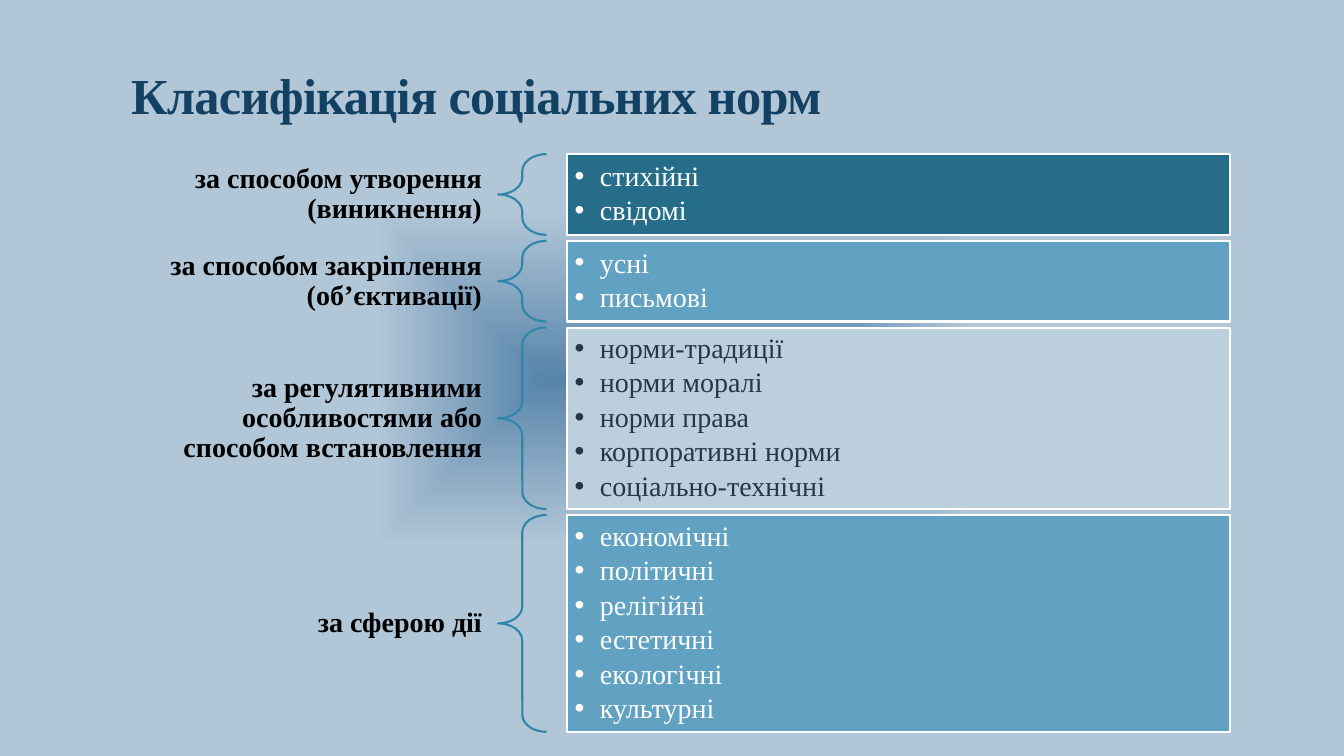
from lxml.etree import SubElement
from pptx import Presentation
from pptx.dml.color import RGBColor
from pptx.enum.shapes import MSO_SHAPE
from pptx.enum.text import MSO_ANCHOR, MSO_AUTO_SIZE, PP_ALIGN
from pptx.oxml import parse_xml
from pptx.oxml.ns import nsdecls, qn
from pptx.util import Inches, Pt

deck = Presentation()
deck.slide_width, deck.slide_height = Inches(13.33), Inches(7.5)
col, row = deck.slide_width / 1333, deck.slide_height / 750
hue = RGBColor.from_string


def grid(left, top, wide, tall):
    return [round(n * unit) for n, unit in zip((left, top, wide, tall), (col, row, col, row))]


def write(frame, lines, frame_look, line_look, font_look, color):
    frame.text = "\n".join(lines)
    looks = [(frame, frame_look)]
    for line in frame.paragraphs:
        font = line.runs[0].font
        font.color.rgb = hue(color)
        looks += [(line, line_look), (font, font_look)]
    for item, look in looks:
        for name, value in look.items():
            setattr(item, name, value)


slide = deck.slides.add_slide(deck.slide_layouts[5])
slide.background.fill.solid()
solid = slide.element.find(".//" + qn("p:bgPr")).find(qn("a:solidFill"))
glow = parse_xml(
    f'<a:gradFill {nsdecls("a")} rotWithShape="1"><a:gsLst>'
    '<a:gs pos="0"><a:srgbClr val="5884AA"><a:alpha val="80000"/></a:srgbClr></a:gs>'
    '<a:gs pos="44000"><a:srgbClr val="B1C6D7"/></a:gs>'
    '<a:gs pos="100000"><a:srgbClr val="B1C6D7"/></a:gs></a:gsLst>'
    '<a:path path="shape"><a:fillToRect l="50000" t="50000" r="50000" b="50000"/></a:path>'
    "</a:gradFill>"
)
solid.getparent().replace(solid, glow)

bold = {"name": "Times New Roman", "size": Pt(20), "bold": True}
plain = {**bold, "bold": False}
middle = {"word_wrap": True, "vertical_anchor": MSO_ANCHOR.MIDDLE}
label_frame = {
    **middle,
    "margin_left": Inches(0.16), "margin_right": Inches(0.16),
    "margin_top": Inches(0.06), "margin_bottom": Inches(0.06),
}
sides = ("margin_left", "margin_right", "margin_top", "margin_bottom")
list_frame = {**middle, **dict.fromkeys(sides, Inches(0.08))}
label_line = {"alignment": PP_ALIGN.RIGHT, "line_spacing": 0.9}
list_line = {"alignment": PP_ALIGN.LEFT, "line_spacing": 0.9, "space_after": Pt(3)}

title = slide.shapes.title
title.left, title.top, title.width, title.height = grid(120, 43, 1100, 86)
write(
    title.text_frame, ["Класифікація соціальних норм"],
    {"auto_size": MSO_AUTO_SIZE.NONE, "word_wrap": True, "vertical_anchor": MSO_ANCHOR.BOTTOM},
    {"alignment": PP_ALIGN.LEFT, "line_spacing": 0.85},
    {**bold, "size": Pt(36)}, "134163",
)
title.text_frame.paragraphs[0].runs[0].font._element.set("spc", "-50")

groups = [
    ("за способом утворення (виникнення)", 2, 80, "266D8A", "FFFFFF",
     ["стихійні", "свідомі"]),
    ("за способом закріплення (об’єктивації)", 2, 80, "61A2C3", "FFFFFF",
     ["усні", "письмові"]),
    ("за регулятивними особливостями або способом встановлення", 3, 180, "BBCFDD", "253848",
     ["норми-традиції", "норми моралі", "норми права", "корпоративні норми", "соціально-технічні"]),
    ("за сферою дії", 1, 215, "61A2C3", "FFFFFF",
     ["економічні", "політичні", "релігійні", "естетичні", "екологічні", "культурні"]),
]

top, gap = 153, 6
chart = slide.shapes.add_group_shape().shapes
for name, count, tall, fill, ink, norms in groups:
    high = 12 + 28.5 * count
    label = chart.add_textbox(*grid(120, top + (tall - high) / 2, 374, high))
    write(label.text_frame, [name], label_frame, label_line, bold, "000000")

    brace = chart.add_shape(MSO_SHAPE.LEFT_BRACE, *grid(494, top, 48, tall))
    brace.adjustments[0], brace.adjustments[1] = 0.35, 0.5
    brace.fill.background()

    box = chart.add_shape(MSO_SHAPE.RECTANGLE, *grid(562, top, 658, tall))
    box.fill.solid()
    box.fill.fore_color.rgb = hue(fill)
    write(box.text_frame, norms, list_frame, list_line, plain, ink)
    for line in box.text_frame.paragraphs:
        props = line._p.get_or_add_pPr()
        props.set("marL", str(Inches(0.25)))
        props.set("indent", str(-Inches(0.25)))
        SubElement(props, qn("a:buFont")).set("typeface", "Arial")
        SubElement(props, qn("a:buChar")).set("char", "•")

    for shape, edge in ((brace, "2F86A9"), (box, "FFFFFF")):
        shape.shadow.inherit = False
        shape.line.color.rgb = hue(edge)
        shape.line.width = Pt(1.5)
    top += tall + gap

deck.save("out.pptx")
